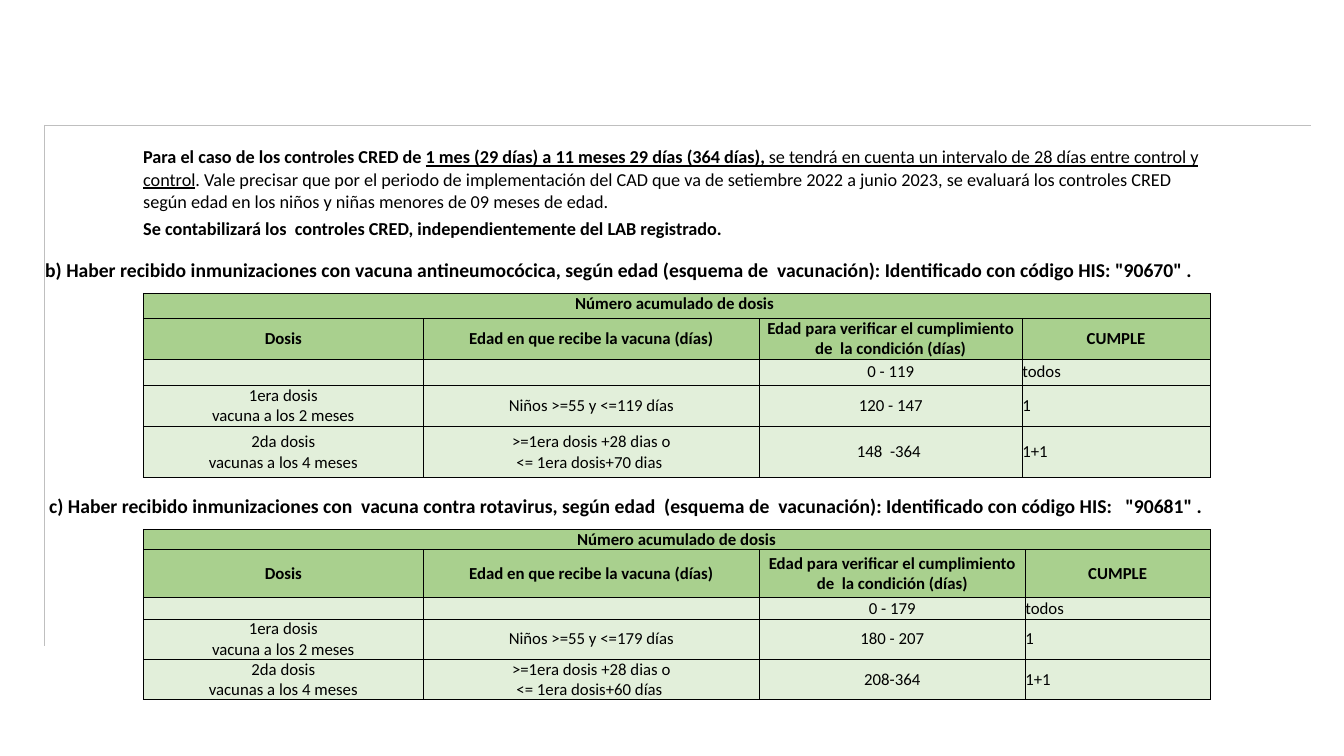
from lxml.etree import SubElement
from pptx import Presentation
from pptx.dml.color import RGBColor
from pptx.enum.shapes import MSO_CONNECTOR as Connector
from pptx.enum.text import MSO_ANCHOR as Anchor, MSO_AUTO_SIZE as AutoSize, PP_ALIGN as Align
from pptx.oxml.ns import qn
from pptx.util import Inches, Pt

INTERVAL_NOTE = [
    ("Para el caso de los controles CRED de ", {"bold": True}),
    ("1 mes (29 días) a 11 meses 29 días (364 días),", {"bold": True, "underline": True}),
    (" se tendrá en cuenta un intervalo de 28 días entre control y control", {"underline": True}),
    (". Vale precisar que por el periodo de implementación del CAD que va de setiembre 2022 a junio 2023, "
     "se evaluará los controles CRED según edad en los niños y niñas menores de 09 meses de edad.", {}),
]
COUNT_NOTE = [("Se contabilizará los  controles CRED, independientemente del LAB registrado.", {"bold": True})]

HEADERS = ("Dosis", "Edad en que recibe la vacuna (días)",
           "Edad para verificar el cumplimiento de  la condición (días)", "CUMPLE")
FIRST_DOSE = "1era dosis\nvacuna a los 2 meses"
SECOND_DOSE = "2da dosis\nvacunas a los 4 meses"

VACCINES = [
    {
        "heading": "b) Haber recibido inmunizaciones con vacuna antineumocócica, según edad "
                   "(esquema de  vacunación): Identificado con código HIS: \"90670\" .",
        "heading_at": (0.35, 2.51),
        "top": 2.91,
        "title": "Número acumulado de dosis ",
        "columns": [(2.78,), (1.16, 1.12, 1.05), (2.61,), (1.86,)],
        "rows": (0.25, 0.4, 0.26, 0.41, 0.51),
        "body": [
            ("", "", "0 - 119", "todos"),
            (FIRST_DOSE, "Niños >=55 y <=119 días", "120 - 147", "1"),
            (SECOND_DOSE, ">=1era dosis +28 dias o\n<= 1era dosis+70 dias ", "148  -364 ", "1+1"),
        ],
    },
    {
        "heading": "c) Haber recibido inmunizaciones con  vacuna contra rotavirus, según edad  "
                   "(esquema de  vacunación): Identificado con código HIS:   \"90681\" .",
        "heading_at": (0.39, 4.85),
        "top": 5.25,
        "title": "Número acumulado de dosis",
        "columns": [(2.78,), (3.33,), (2.64,), (1.83,)],
        "rows": (0.2, 0.48, 0.21, 0.4, 0.4),
        "body": [
            ("", "", "0 - 179", "todos"),
            (FIRST_DOSE, "Niños >=55 y <=179 días", "180 - 207", "1"),
            (SECOND_DOSE, ">=1era dosis +28 dias o\n<= 1era dosis+60 días ", "208-364", "1+1"),
        ],
    },
]

TABLE_LEFT = 1.42
FRAME_CORNER = (0.44, 1.24)
FRAME_ENDS = [(0.44, 6.41), (13, 1.24)]
FONT = "Calibri"
BLACK, WHITE, GRAY = "000000", "FFFFFF", "BFBFBF"
HEADER_GREEN, BODY_GREEN = "A9D08E", "E2EFDA"


def color(value):
    return RGBColor.from_string(value)


def write(frame, text, size=12, bold=False, underline=None, align=Align.LEFT):
    paragraph = frame.paragraphs[0]
    paragraph.alignment = align
    if not text:
        SubElement(paragraph._p, qn("a:endParaRPr"), sz=str(size * 100))
    for number, line in enumerate(text.split("\n") if text else []):
        if number:
            paragraph.add_line_break()
            SubElement(paragraph._p[-1], qn("a:rPr"), sz=str(size * 100))
        run = paragraph.add_run()
        run.text = line
        run.font.name = FONT
        run.font.size = Pt(size)
        run.font.bold = bold
        run.font.underline = underline
        run.font.color.rgb = color(BLACK)


def add_line(slide, start, end):
    line = slide.shapes.add_connector(Connector.STRAIGHT, *map(Inches, start + end))
    line.line.color.rgb = color(GRAY)
    line.line.width = Pt(0.5)
    SubElement(line._element.spPr, qn("a:effectLst"))


def add_grid(slide, top, columns, rows):
    table = slide.shapes.add_table(len(rows), len(columns), Inches(TABLE_LEFT), Inches(top),
                                   Inches(sum(columns)), Inches(sum(rows))).table
    table.first_row = table.horz_banding = False
    for column, width in zip(table.columns, columns):
        column.width = Inches(width)
    for row, height in zip(table.rows, rows):
        row.height = Inches(height)
    return table


def style_cell(cell, fill, anchor=Anchor.MIDDLE, sides=()):
    cell.margin_left = cell.margin_right = cell.margin_top = cell.margin_bottom = 0
    cell.vertical_anchor = anchor
    for side in ("L", "R", "T", "B"):
        edge = SubElement(cell._tc.get_or_add_tcPr(), qn(f"a:ln{side}"), w=str(Pt(0.5)))
        if side in sides:
            SubElement(SubElement(edge, qn("a:solidFill")), qn("a:srgbClr"), val=BLACK)
        else:
            SubElement(edge, qn("a:noFill"))
    cell.fill.solid()
    cell.fill.fore_color.rgb = color(fill)


def add_notes_table(slide):
    table = add_grid(slide, 1.44, (10.58,), (0.69, 0.25))
    for row, (pieces, anchor) in enumerate([(INTERVAL_NOTE, Anchor.MIDDLE), (COUNT_NOTE, Anchor.BOTTOM)]):
        cell = table.cell(row, 0)
        style_cell(cell, WHITE, anchor)
        for text, style in pieces:
            write(cell.text_frame, text, size=13, **style)


def add_heading(slide, text, left, top):
    box = slide.shapes.add_textbox(Inches(left), Inches(top), Inches(12.63), Inches(0.34))
    box.text_frame.word_wrap = True
    box.text_frame.auto_size = AutoSize.SHAPE_TO_FIT_TEXT
    write(box.text_frame, text, size=14, bold=True)


def add_vaccine_table(slide, vaccine):
    groups = vaccine["columns"]
    table = add_grid(slide, vaccine["top"], sum(groups, ()), vaccine["rows"])
    last = len(HEADERS) - 1
    content = [(vaccine["title"],) + ("",) * last, HEADERS] + vaccine["body"]
    for row, texts in enumerate(content):
        header = row < 2
        start = 0
        for column, (text, group) in enumerate(zip(texts, groups)):
            cells = [table.cell(row, start + offset) for offset in range(len(group))]
            start += len(group)
            align = Align.CENTER if header or column < last else Align.LEFT
            for cell in cells:
                sides = "TB" + "L" * (cell is cells[0]) + "R" * (cell is cells[-1])
                style_cell(cell, HEADER_GREEN if header else BODY_GREEN,
                           Anchor.MIDDLE if row else Anchor.TOP, sides)
                write(cell.text_frame, text if cell is cells[0] else "", bold=header, align=align)
            if text and len(cells) > 1:
                cells[0].merge(cells[-1])
    table.cell(0, 0).merge(table.cell(0, len(table.columns) - 1))


def main():
    presentation = Presentation()
    presentation.slide_width = Inches(13.33)
    presentation.slide_height = Inches(7.5)
    slide = presentation.slides.add_slide(presentation.slide_layouts[6])
    for end in FRAME_ENDS:
        add_line(slide, FRAME_CORNER, end)
    add_notes_table(slide)
    for vaccine in VACCINES:
        add_heading(slide, vaccine["heading"], *vaccine["heading_at"])
        add_vaccine_table(slide, vaccine)
    presentation.save("out.pptx")


if __name__ == "__main__":
    main()
